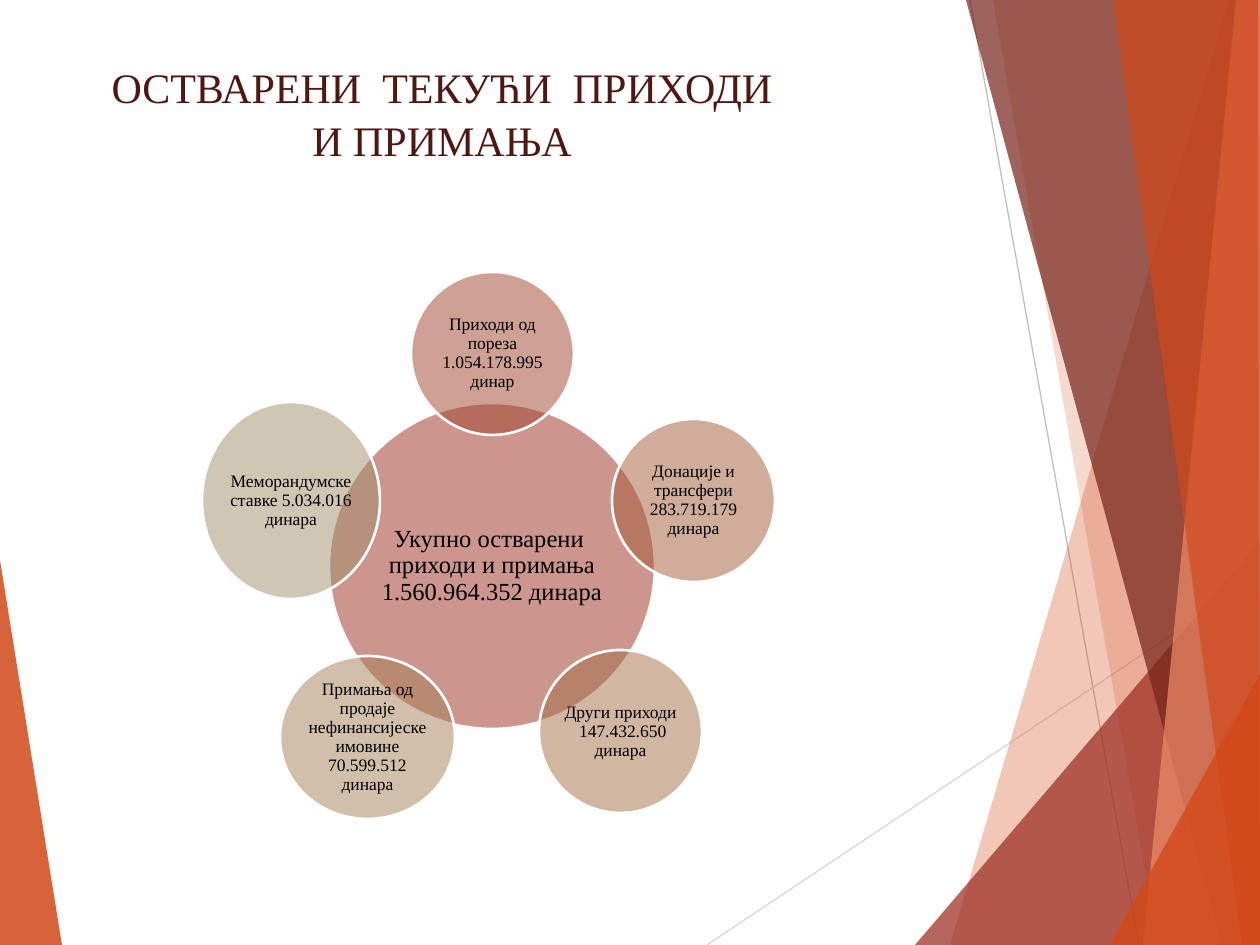
from lxml import etree
from pptx import Presentation
from pptx.dml.color import RGBColor
from pptx.enum.shapes import MSO_CONNECTOR, MSO_SHAPE
from pptx.enum.text import MSO_ANCHOR, PP_ALIGN
from pptx.oxml.ns import qn
from pptx.util import Pt

PX = 914400 / 126  # EMU in one px
CENTER, TOP, MIDDLE = PP_ALIGN.CENTER, MSO_ANCHOR.TOP, MSO_ANCHOR.MIDDLE
OVAL, STRAIGHT = MSO_SHAPE.OVAL, MSO_CONNECTOR.STRAIGHT

FONT = "Times New Roman"
WHITE = RGBColor(0xFF, 0xFF, 0xFF)
BLACK = RGBColor(0x00, 0x00, 0x00)
TITLE_BROWN = RGBColor(0x4E, 0x17, 0x10)
ORANGE = RGBColor(0xD3, 0x48, 0x17)
LIGHT_ORANGE = RGBColor(0xEF, 0x8C, 0x6A)
RED = RGBColor(0x9B, 0x2D, 0x1F)
DARK_RED = RGBColor(0x74, 0x22, 0x17)
LIGHT_GRAY = RGBColor(0xD9, 0xD9, 0xD9)
GRAY = RGBColor(0xBF, 0xBF, 0xBF)

TITLE = "ОСТВАРЕНИ  ТЕКУЋИ  ПРИХОДИ\vИ ПРИМАЊА"
TITLE_BOX = (0, 53, 874, 181)

# Decoration: corner points, colour, opacity in percent
LEFT_WEDGE = ([(0, 560), (62, 945), (0, 945)], ORANGE, 85)
RIGHT_FACETS = [
    ([(1229, 0), (950, 945), (1260, 945), (1260, 0)], ORANGE, 30),
    ([(993, 0), (1158, 945), (1260, 945), (1260, 0)], ORANGE, 20),
    ([(915, 945), (1260, 541), (1260, 945)], RED, 72),
    ([(966, 0), (1222, 945), (1260, 945), (1260, 0)], DARK_RED, 70),
    ([(1236, 0), (1143, 945), (1260, 945), (1260, 0)], LIGHT_ORANGE, 70),
    ([(1113, 0), (1242, 945), (1260, 945), (1258, 0)], ORANGE, 65),
    ([(1110, 945), (1260, 674), (1260, 945)], ORANGE, 80),
]
THIN_LINES = [((707, 945, 1260, 576), LIGHT_GRAY), ((970, 0, 1139, 945), GRAY)]

# Circles: text, (left, top, width, height), colour, text size, inset
CIRCLES = [
    ("Укупно остварени  приходи и примања 1.560.964.352 динара",
     (329, 403, 326, 326), RED, 14, 2),
    ("Приходи од пореза 1.054.178.995 динар",
     (411, 272, 163, 163), RGBColor(0xA0, 0x44, 0x2B), 10, 1),
    ("Донације и трансфери 283.719.179 динара",
     (612, 419, 163, 163), RGBColor(0xA3, 0x5B, 0x38), 10, 1),
    ("Други приходи  147.432.650 динара",
     (539, 650, 163, 163), RGBColor(0xA5, 0x6F, 0x46), 10, 1),
    ("Примања од продаје нефинансијеске имовине 70.599.512 динара",
     (280, 656, 175, 163), RGBColor(0xA6, 0x81, 0x56), 10, 1),
    ("Меморандумске ставке 5.034.016 динара",
     (202, 402, 178, 197), RGBColor(0xA2, 0x8E, 0x6A), 10, 1),
]


def px(*values):
    return [round(value * PX) for value in values]


def fill_shape(shape, color, opacity):
    shape.shadow.inherit = False
    shape.fill.solid()
    shape.fill.fore_color.rgb = color
    color_element = shape._element.spPr.find(qn("a:solidFill"))[0]
    etree.SubElement(color_element, qn("a:alpha"), val=str(opacity * 1000))


def set_text(shape, text, size, color, anchor, spacing, insets):
    frame = shape.text_frame
    frame.text = text
    left, top, right, bottom = px(*insets)
    frame_format = {"word_wrap": True, "vertical_anchor": anchor,
                    "margin_left": left, "margin_top": top,
                    "margin_right": right, "margin_bottom": bottom}
    for name, value in frame_format.items():
        setattr(frame, name, value)
    paragraph = frame.paragraphs[0]
    paragraph.alignment = CENTER
    paragraph.line_spacing = spacing
    for font in [paragraph.font] + [run.font for run in paragraph.runs]:
        for name, value in {"name": FONT, "size": Pt(size)}.items():
            setattr(font, name, value)
        font.color.rgb = color


def add_facet(slide, points, color, opacity):
    builder = slide.shapes.build_freeform(*points[0], scale=PX)
    builder.add_line_segments(points[1:], close=True)
    shape = builder.convert_to_shape()
    fill_shape(shape, color, opacity)
    shape.line.fill.background()


def add_thin_line(slide, ends, color):
    line = slide.shapes.add_connector(STRAIGHT, *px(*ends))
    line.line.color.rgb = color
    line.line.width = Pt(0.75)
    etree.SubElement(line._element.spPr, qn("a:effectLst"))


def add_circle(slide, text, box, color, size, inset):
    circle = slide.shapes.add_shape(OVAL, *px(*box))
    fill_shape(circle, color, 50)
    circle.line.color.rgb = WHITE
    circle.line.width = Pt(1.5)
    set_text(circle, text, size, BLACK, MIDDLE, 0.9, [inset] * 4)


def main():
    presentation = Presentation()
    presentation.slide_width, presentation.slide_height = px(1260, 945)
    slide = presentation.slides.add_slide(presentation.slide_layouts[5])

    # Decoration
    add_facet(slide, *LEFT_WEDGE)
    for ends, color in THIN_LINES:
        add_thin_line(slide, ends, color)
    for facet in RIGHT_FACETS:
        add_facet(slide, *facet)

    # Title
    title = slide.shapes.title
    title.left, title.top, title.width, title.height = px(*TITLE_BOX)
    set_text(title, TITLE, 24, TITLE_BROWN, TOP, 1.05, (23, 6, 13, 6))

    # Revenue circles
    for circle in CIRCLES:
        add_circle(slide, *circle)

    presentation.save("out.pptx")


if __name__ == "__main__":
    main()
